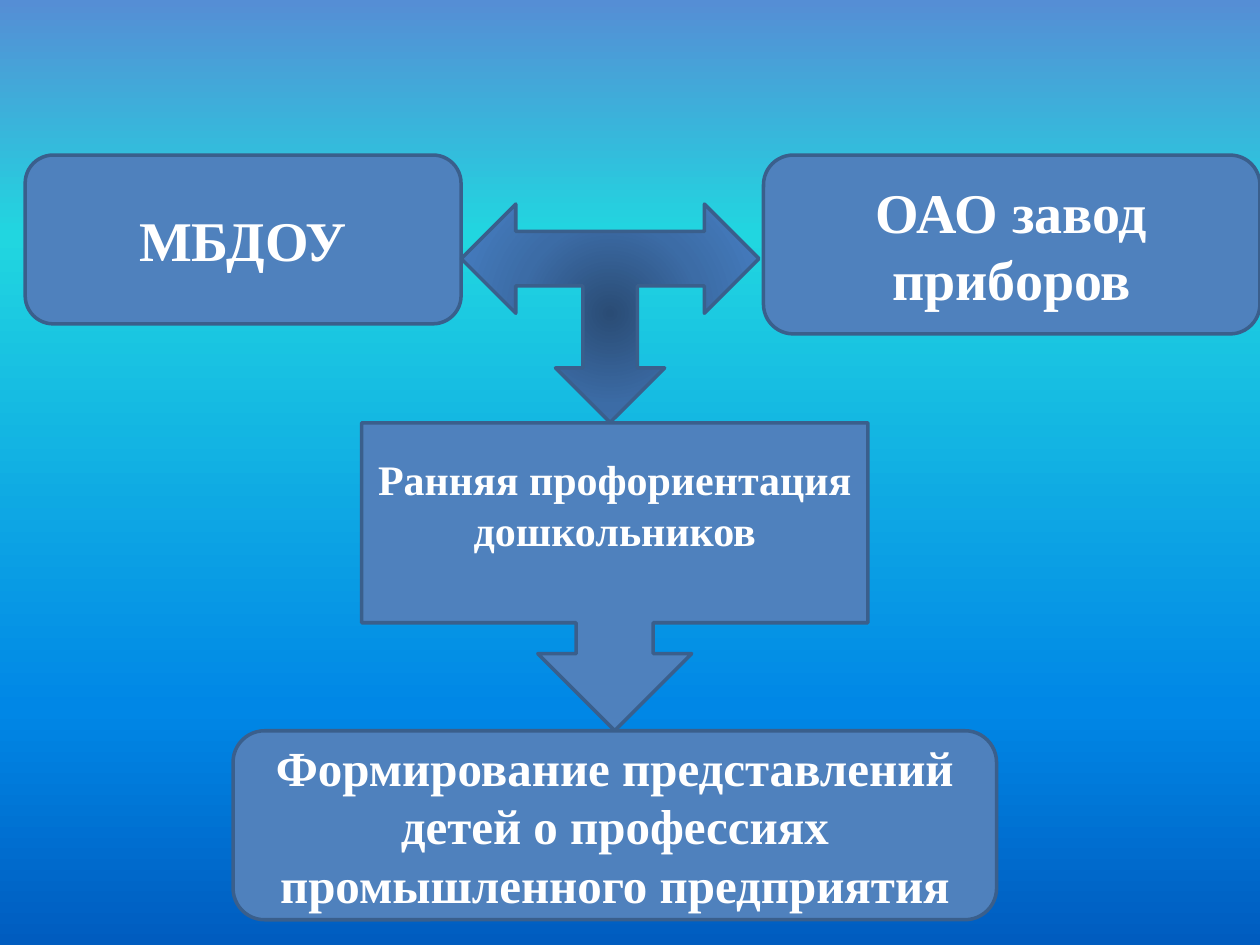
from lxml.etree import SubElement
from pptx import Presentation
from pptx.dml.color import RGBColor
from pptx.enum.shapes import MSO_SHAPE
from pptx.enum.text import MSO_ANCHOR, PP_ALIGN
from pptx.oxml import parse_xml
from pptx.oxml.ns import nsdecls, qn
from pptx.util import Pt

FONT = "Times New Roman"
COLORS = {"fill": "4F81BD", "line": "3A5F8C", "text": "FFFFFF"}
SKY = [(0, "558ED5"), (25, "21D6E0"), (75, "0087E6"), (100, "005CBF")]
GLOW = [(0, "2A4C75"), (50, "3C6CA6"), (100, "4780C5")]

# preset, (left, top, width, height), font size, bottom inset, paragraphs
BOXES = [
    (MSO_SHAPE.ROUNDED_RECTANGLE, (14.4, 88.6, 249.1, 96.5), 32, 3.6,
     ["МБДОУ"]),
    (MSO_SHAPE.ROUNDED_RECTANGLE, (436.3, 88.6, 283.7, 102.2), 32, 3.6,
     ["ОАО завод приборов"]),
    (MSO_SHAPE.ROUNDED_RECTANGLE, (133.2, 417.6, 436.3, 108), 28, 3.6,
     ["Формирование представлений детей о профессиях "
      "промышленного предприятия"]),
    (MSO_SHAPE.DOWN_ARROW_CALLOUT, (206.6, 241.6, 289.4, 175.9), 24, 25,
     ["Ранняя профориентация", "дошкольников"]),
]
ARROW = (263.5, 116.6, 170.2, 124.8)


def color(name):
    return RGBColor.from_string(COLORS[name])


def set_stops(grad, stops):
    """Replace the colour stops of a gradient fill."""
    group = grad.find(qn("a:gsLst"))
    for old in list(group):
        group.remove(old)
    for pos, tone in stops:
        stop = SubElement(group, qn("a:gs"), pos=str(pos * 1000))
        SubElement(stop, qn("a:srgbClr"), val=tone)


def add_shape(slide, preset, frame):
    shape = slide.shapes.add_shape(preset, *map(Pt, frame))
    shape.shadow.inherit = False
    shape.line.color.rgb = color("line")
    shape.line.width = Pt(2)
    return shape


def add_box(slide, preset, frame, size, inset, lines):
    box = add_shape(slide, preset, frame)
    box.fill.solid()
    box.fill.fore_color.rgb = color("fill")
    text = box.text_frame
    text.word_wrap = True
    text.vertical_anchor = MSO_ANCHOR.MIDDLE
    text.margin_bottom = Pt(inset)
    text.text = "\n".join(lines)
    for para in text.paragraphs:
        para.alignment = PP_ALIGN.CENTER
        para.font.name = FONT
        para.font.size = Pt(size)
        para.font.bold = True
        para.font.color.rgb = color("text")


def add_arrow(slide):
    arrow = add_shape(slide, MSO_SHAPE.LEFT_RIGHT_UP_ARROW, ARROW)
    arrow.rotation = 180
    arrow.fill.gradient()
    grad = arrow.element.spPr.find(qn("a:gradFill"))
    set_stops(grad, GLOW)
    grad.replace(grad.find(qn("a:lin")), parse_xml(
        f'<a:path {nsdecls("a")} path="circle">'
        '<a:fillToRect l="50000" t="50000" r="50000" b="50000"/></a:path>'))


def main():
    deck = Presentation()
    deck.slide_width, deck.slide_height = Pt(720), Pt(540)
    slide = deck.slides.add_slide(deck.slide_layouts[6])
    back = slide.background.fill
    back.gradient()
    back.gradient_angle = 270
    set_stops(slide.element.find(".//" + qn("a:gradFill")), SKY)
    for box in BOXES:
        add_box(slide, *box)
    add_arrow(slide)
    deck.save("out.pptx")


if __name__ == "__main__":
    main()
